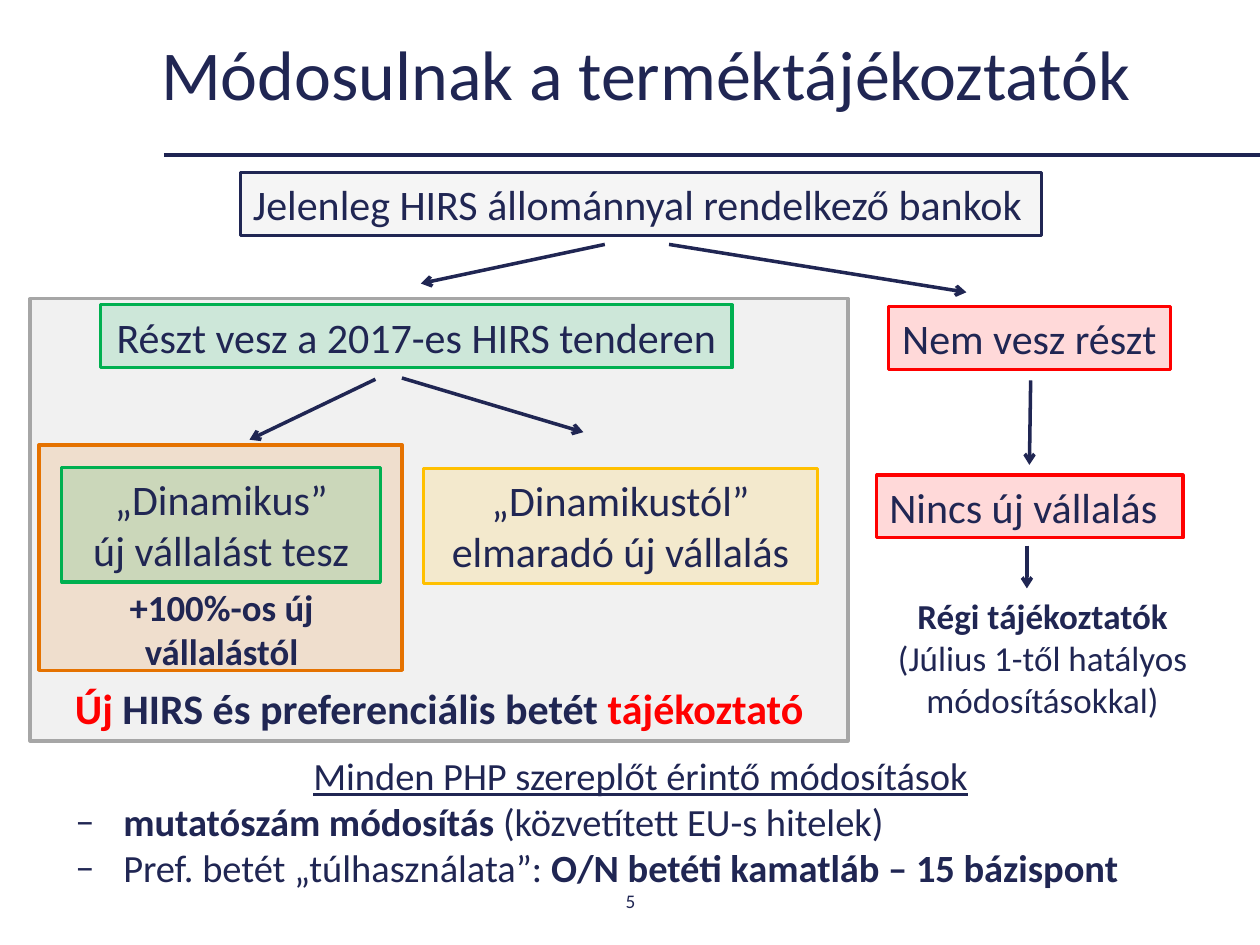
import pptx
import pptx.util
import pptx.dml.color
import pptx.enum.shapes
import pptx.enum.text
import pptx.oxml.ns
from lxml import etree
from pptx.util import Inches

COLORS = {"navy": "202653", "rule": "1E2452", "gray": "A6A6A6", "silver": "BFBFBF",
          "orange": "E57200", "green": "00B050", "red": "FF0000", "amber": "FFC000"}
qn = pptx.oxml.ns.qn
ALIGN = pptx.enum.text.PP_ALIGN
ANCHOR = pptx.enum.text.MSO_ANCHOR


def rgb(name):
    return pptx.dml.color.RGBColor.from_string(COLORS[name])


def write(frame, paragraphs, size, align=ALIGN.CENTER, anchor=ANCHOR.TOP, wrap=True):
    frame.word_wrap = wrap
    frame.vertical_anchor = anchor
    for i, pieces in enumerate(paragraphs):
        paragraph = frame.paragraphs[0] if i == 0 else frame.add_paragraph()
        paragraph.alignment = align
        paragraph.text = pieces[0][0]
        for piece in pieces[1:]:
            paragraph.add_run().text = piece[0]
        for run in paragraph.runs:
            run.font.name = "Calibri"
            run.font.size = pptx.util.Pt(size)
            run.font.color.rgb = rgb("navy")
        if len(paragraph.runs) == len(pieces):
            for run, (_, bold, color) in zip(paragraph.runs, pieces):
                run.font.bold = bold
                run.font.color.rgb = rgb(color)


deck = pptx.Presentation()
deck.slide_width, deck.slide_height = Inches(10), Inches(7.5)
slide = deck.slides.add_slide(deck.slide_layouts[6])
shapes = slide.shapes

boxes = [
    (0.24, 2.37, 6.49, 3.51, "gray", "gray", 2, "", ALIGN.CENTER, True),
    (0.31, 3.53, 2.88, 1.79, "orange", "orange", 2, "", ALIGN.CENTER, True),
    (1.91, 1.37, 6.36, 0.5, "silver", "navy", 1.75,
     "Jelenleg HIRS állománnyal rendelkező bankok", ALIGN.LEFT, False),
    (0.8, 2.42, 5.01, 0.5, "green", "green", 1.75,
     "Részt vesz a 2017-es HIRS tenderen", ALIGN.CENTER, False),
    (7.05, 2.43, 2.24, 0.5, "red", "red", 1.75, "Nem vesz részt", ALIGN.CENTER, False),
    (0.49, 3.71, 2.53, 0.91, "green", "green", 1.75,
     "„Dinamikus”\núj vállalást tesz", ALIGN.CENTER, True),
    (3.36, 3.72, 3.13, 0.91, "amber", "amber", 1.75,
     "„Dinamikustól” elmaradó új vállalás", ALIGN.CENTER, True),
    (6.96, 3.77, 2.43, 0.5, "red", "red", 1.75, "Nincs új vállalás", ALIGN.LEFT, False),
]
for left, top, width, height, fill, outline, weight, label, align, wrap in boxes:
    box = shapes.add_shape(pptx.enum.shapes.MSO_SHAPE.RECTANGLE,
                           Inches(left), Inches(top), Inches(width), Inches(height))
    box.shadow.inherit = False
    box.fill.solid()
    box.fill.fore_color.rgb = rgb(fill)
    tint = box.fill._xPr.find(qn("a:solidFill"))[0]
    etree.SubElement(tint, qn("a:alpha")).set("val", "15000")
    box.line.color.rgb = rgb(outline)
    box.line.width = pptx.util.Pt(weight)
    if label:
        write(box.text_frame, [[(label, False, "navy")]], 24, align, wrap=wrap)

lines = [
    (1.3, 1.23, 10, 1.23, "rule", 2.25),
    (4.8, 1.94, 3.34, 2.25, "navy", 2),
    (5.31, 1.94, 7.67, 2.32, "navy", 2),
    (2.98, 3.01, 1.98, 3.49, "navy", 2),
    (3.19, 3, 4.63, 3.43, "navy", 2),
    (8.18, 3.02, 8.17, 3.69, "navy", 2),
    (8.15, 4.33, 8.15, 4.67, "navy", 2),
]
for x1, y1, x2, y2, color, weight in lines:
    line = shapes.add_connector(pptx.enum.shapes.MSO_CONNECTOR.STRAIGHT,
                                Inches(x1), Inches(y1), Inches(x2), Inches(y2))
    line.line.color.rgb = rgb(color)
    line.line.width = pptx.util.Pt(weight)
    if color == "navy":
        etree.SubElement(line.line._get_or_add_ln(), qn("a:tailEnd")).set("type", "arrow")
    etree.SubElement(line._element.spPr, qn("a:effectLst"))

texts = [
    (1.18, 0.2, 8.19, 0.83, 40, ALIGN.LEFT, ANCHOR.MIDDLE,
     [[("Módosulnak a terméktájékoztatók", False, "navy")]]),
    (0.24, 5.37, 6.49, 0.51, 24, ALIGN.CENTER, ANCHOR.TOP,
     [[("Új ", True, "red"), ("HIRS és preferenciális betét ", True, "navy"),
       ("tájékoztató", True, "red")]]),
    (0.33, 4.59, 2.86, 0.81, 21, ALIGN.CENTER, ANCHOR.TOP,
     [[("+100%-os új vállalástól", True, "navy")]]),
    (6.92, 4.67, 2.71, 1.11, 20, ALIGN.CENTER, ANCHOR.TOP,
     [[("Régi tájékoztatók", True, "navy")],
      [("(Július 1-től hatályos módosításokkal)", False, "navy")]]),
    (3.88, 6.95, 2.25, 0.4, 11, ALIGN.CENTER, ANCHOR.MIDDLE, [[("5", False, "navy")]]),
    (0.48, 5.92, 9.21, 1.55, 22, ALIGN.LEFT, ANCHOR.TOP,
     [[("Minden PHP szereplőt érintő módosítások", False, "navy")],
      [("mutatószám módosítás ", True, "navy"),
       ("(közvetített EU-s hitelek)", False, "navy")],
      [("Pref. betét „túlhasználata”: ", False, "navy"),
       ("O/N betéti kamatláb – 15 bázispont", True, "navy")]]),
]
for left, top, width, height, size, align, anchor, paragraphs in texts:
    caption = shapes.add_textbox(Inches(left), Inches(top), Inches(width), Inches(height))
    write(caption.text_frame, paragraphs, size, align, anchor)
    if size == 40:
        caption.text_frame.paragraphs[0].line_spacing = 0.9

heading, *changes = caption.text_frame.paragraphs
heading.alignment = ALIGN.CENTER
heading.runs[0].font.underline = True
for change in changes:
    properties = change._p.get_or_add_pPr()
    properties.set("marL", str(Inches(0.4)))
    properties.set("indent", str(Inches(-0.38)))
    etree.SubElement(properties, qn("a:buFont")).set("typeface", "Calibri")
    etree.SubElement(properties, qn("a:buChar")).set("char", "–")

deck.save("out.pptx")
